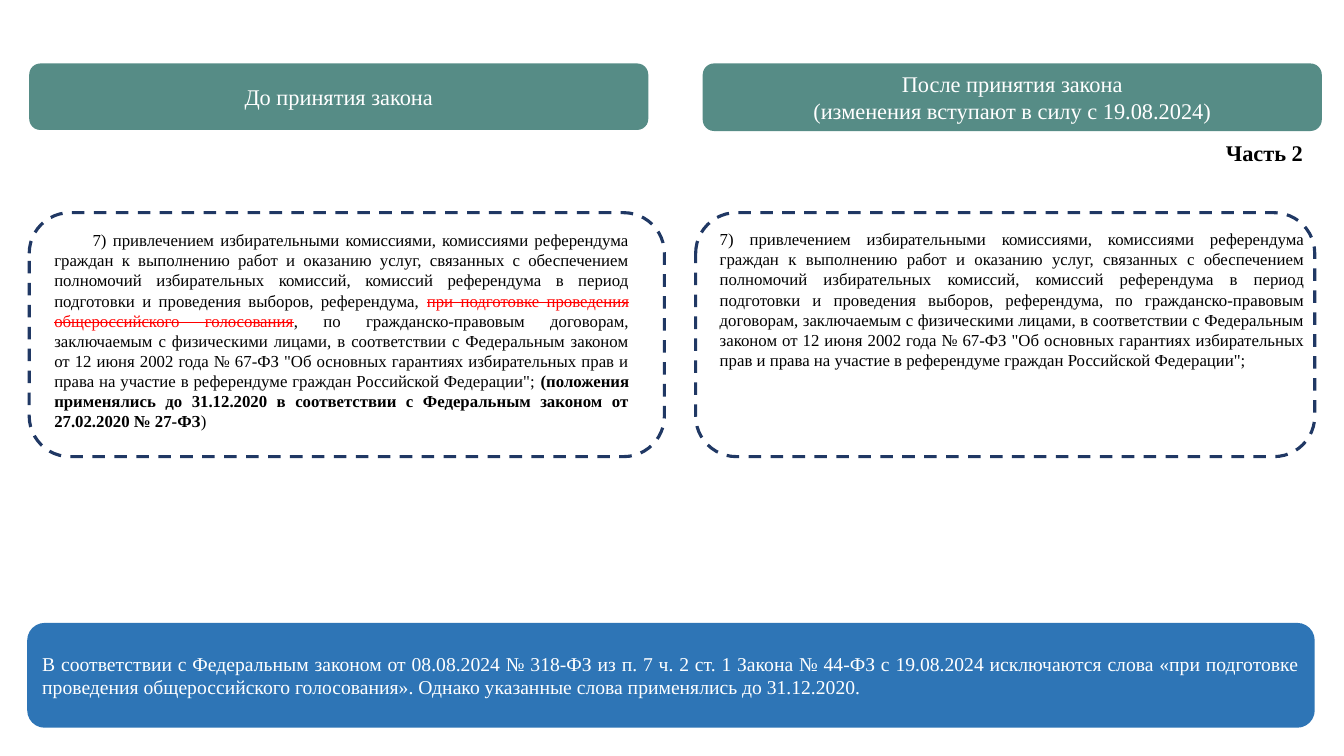
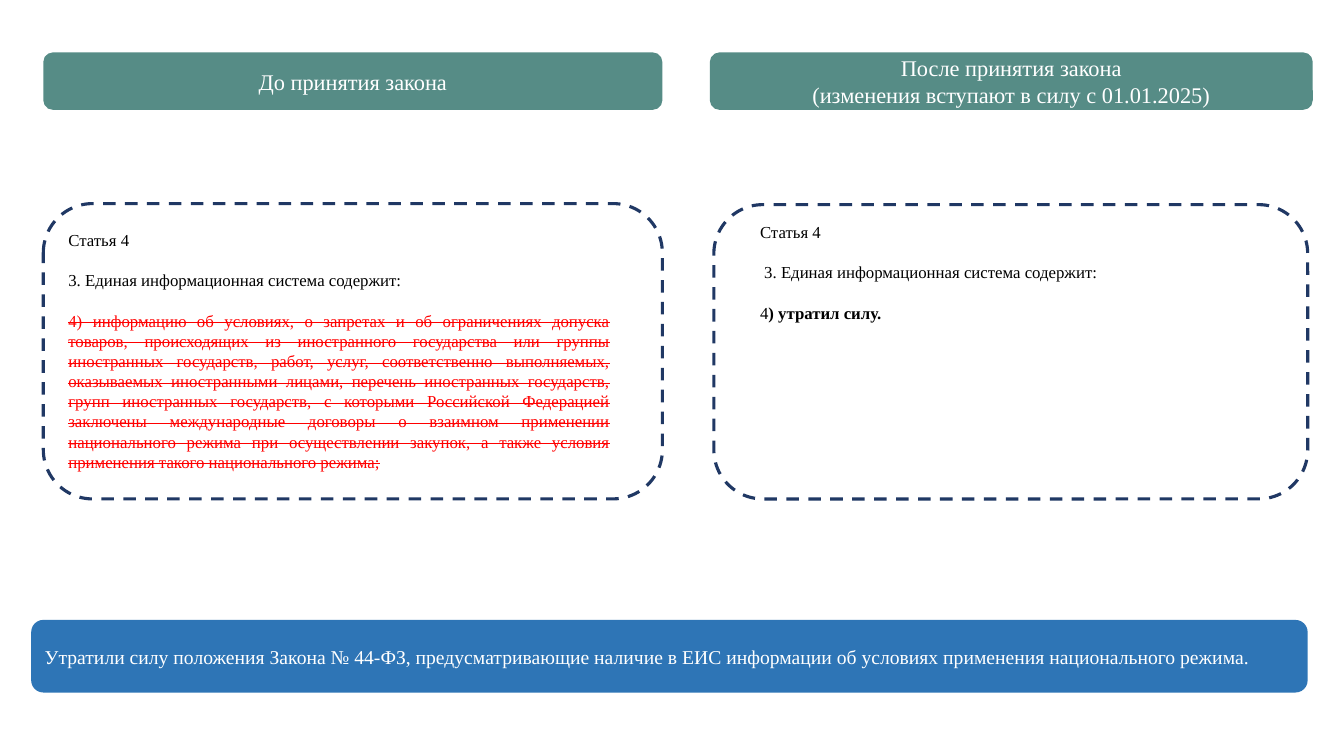
from collections import namedtuple

from pptx import Presentation
from pptx.dml.color import RGBColor
from pptx.enum.dml import MSO_LINE
from pptx.enum.shapes import MSO_SHAPE
from pptx.enum.text import MSO_ANCHOR, MSO_AUTO_SIZE, PP_ALIGN
from pptx.util import Inches, Pt

ROUNDED = MSO_SHAPE.ROUNDED_RECTANGLE
DASH = MSO_LINE.DASH
MIDDLE = MSO_ANCHOR.MIDDLE
GROW = MSO_AUTO_SIZE.SHAPE_TO_FIT_TEXT
LEFT, CENTER, JUSTIFY = PP_ALIGN.LEFT, PP_ALIGN.CENTER, PP_ALIGN.JUSTIFY

TEAL = RGBColor(0x56, 0x8C, 0x86)
NAVY = RGBColor(0x20, 0x38, 0x64)
BLUE = RGBColor(0x2E, 0x75, 0xB6)
RED = RGBColor(0xFF, 0x00, 0x00)
BLACK = RGBColor(0x00, 0x00, 0x00)
WHITE = RGBColor(0xFF, 0xFF, 0xFF)
FONT = "Times New Roman"
HEADER_SIZE, NOTE_SIZE, BODY_SIZE = 16, 14, 12
PARAGRAPH_GAP = Pt(14.4)

PLAIN, BOLD, REMOVED = "plain", "bold", "removed"

Box = namedtuple("Box", "left top width height")

BEFORE = ["До принятия закона"]
AFTER = "После принятия закона"

WORK_START = (
    "7) привлечением избирательными комиссиями, комиссиями референдума граждан "
    "к выполнению работ и оказанию услуг, связанных с обеспечением полномочий "
    "избирательных комиссий, комиссий референдума в период подготовки и "
    "проведения выборов, референдума, "
)
WORK_END = (
    "по гражданско-правовым договорам, заключаемым с физическими лицами, в "
    "соответствии с Федеральным законом от 12 июня 2002 года № 67-ФЗ \"Об "
    "основных гарантиях избирательных прав и права на участие в референдуме "
    "граждан Российской Федерации\";"
)
WORK_BEFORE = [[
    (WORK_START, PLAIN),
    ("при подготовке проведения общероссийского голосования", REMOVED),
    (", " + WORK_END + " ", PLAIN),
    ("(положения применялись до 31.12.2020 в соответствии с Федеральным "
     "законом от 27.02.2020 № 27-ФЗ", BOLD),
    (")", PLAIN),
]]
WORK_AFTER = [[(WORK_START + WORK_END, PLAIN)]]
WORK_NOTE = (
    "В соответствии с Федеральным законом от 08.08.2024 № 318-ФЗ из п. 7 ч. 2 "
    "ст. 1 Закона № 44-ФЗ с 19.08.2024 исключаются слова «при подготовке "
    "проведения общероссийского голосования». Однако указанные слова "
    "применялись до 31.12.2020."
)

ARTICLE = [("Статья 4", PLAIN)]
SYSTEM = "3. Единая информационная система содержит:"
SYSTEM_BEFORE = [
    ARTICLE,
    [(SYSTEM, PLAIN)],
    [("4) информацию об условиях, о запретах и об ограничениях допуска товаров, "
      "происходящих из иностранного государства или группы иностранных "
      "государств, работ, услуг, соответственно выполняемых, оказываемых "
      "иностранными лицами, перечень иностранных государств, групп иностранных "
      "государств, с которыми Российской Федерацией заключены международные "
      "договоры о взаимном применении национального режима при осуществлении "
      "закупок, а также условия применения такого национального режима;",
      REMOVED)],
]
SYSTEM_AFTER = [
    ARTICLE,
    [(" " + SYSTEM, PLAIN)],
    [("4", PLAIN), (") утратил силу.", BOLD)],
]
SYSTEM_NOTE = (
    "Утратили силу положения Закона № 44-ФЗ, предусматривающие наличие в ЕИС "
    "информации об условиях применения национального режима."
)


def inches(box):
    return [Inches(length) for length in box]


def format_run(run, size, color, style=PLAIN):
    run.font.name = FONT
    run.font.size = Pt(size)
    run.font.bold = style == BOLD
    run.font.color.rgb = RED if style == REMOVED else color
    if style == REMOVED:
        run._r.get_or_add_rPr().set("strike", "sngStrike")


def add_rounded(slide, box):
    shape = slide.shapes.add_shape(ROUNDED, *inches(box))
    shape.shadow.inherit = False
    return shape


def add_band(slide, box, lines, fill, size, alignment):
    shape = add_rounded(slide, box)
    shape.fill.solid()
    shape.fill.fore_color.rgb = fill
    shape.line.fill.background()
    text_frame = shape.text_frame
    text_frame.word_wrap = True
    text_frame.vertical_anchor = MIDDLE
    text_frame.text = "\n".join(lines)
    for paragraph in text_frame.paragraphs:
        paragraph.alignment = alignment
        for run in paragraph.runs:
            format_run(run, size, WHITE)


def add_text(slide, box, paragraphs, size, alignment, wrap=True, indent=0):
    text_frame = slide.shapes.add_textbox(*inches(box)).text_frame
    text_frame.word_wrap = wrap
    text_frame.auto_size = GROW
    for index, parts in enumerate(paragraphs):
        paragraph = text_frame.add_paragraph() if index else text_frame.paragraphs[0]
        paragraph.alignment = alignment
        if index:
            paragraph.space_before = PARAGRAPH_GAP
        if indent:
            paragraph._p.get_or_add_pPr().set("indent", str(Inches(indent)))
        for text, style in parts:
            run = paragraph.add_run()
            run.text = text
            format_run(run, size, BLACK, style)


def add_header(slide, box, lines):
    add_band(slide, box, lines, TEAL, HEADER_SIZE, CENTER)


def add_note(slide, box, text):
    add_band(slide, box, [text], BLUE, NOTE_SIZE, JUSTIFY)


def add_panel(slide, box, inset, paragraphs, indent=0):
    shape = add_rounded(slide, box)
    shape.fill.background()
    shape.line.color.rgb = NAVY
    shape.line.width = Pt(2.25)
    shape.line.dash_style = DASH
    text_box = Box(box.left + inset.left, box.top + inset.top, inset.width, inset.height)
    add_text(slide, text_box, paragraphs, BODY_SIZE, JUSTIFY, indent=indent)


def build_work_slide(slide):
    add_header(slide, Box(0.29, 0.63, 6.14, 0.66), BEFORE)
    add_header(slide, Box(6.97, 0.63, 6.14, 0.67),
               [AFTER, "(изменения вступают в силу с 19.08.2024)"])
    add_panel(slide, Box(0.29, 2.11, 6.3, 2.42), Box(0.15, 0.12, 5.9, 2.32),
              WORK_BEFORE, indent=0.38)
    add_panel(slide, Box(6.9, 2.11, 6.14, 2.42), Box(0.14, 0.11, 6, 2.12), WORK_AFTER)
    add_note(slide, Box(0.27, 6.18, 12.77, 1.04), WORK_NOTE)
    add_text(slide, Box(12.06, 1.33, 0.98, 0.37), [[("Часть 2", BOLD)]],
             HEADER_SIZE, LEFT, wrap=False)


def build_system_slide(slide):
    add_header(slide, Box(0.43, 0.52, 6.14, 0.57), BEFORE)
    add_header(slide, Box(7.04, 0.52, 5.98, 0.57),
               [AFTER, "(изменения вступают в силу с 01.01.2025)"])
    add_panel(slide, Box(0.43, 2.02, 6.14, 2.93), Box(0.15, 0.21, 5.57, 2.73),
              SYSTEM_BEFORE)
    add_panel(slide, Box(7.08, 2.03, 5.89, 2.92), Box(0.36, 0.12, 5.46, 1.11),
              SYSTEM_AFTER)
    add_note(slide, Box(0.31, 6.15, 12.66, 0.72), SYSTEM_NOTE)


def main():
    presentation = Presentation()
    presentation.slide_width = Inches(13.33)
    presentation.slide_height = Inches(7.5)
    blank = presentation.slide_layouts[6]
    for build in (build_work_slide, build_system_slide):
        build(presentation.slides.add_slide(blank))
    presentation.save("out.pptx")


if __name__ == "__main__":
    main()
